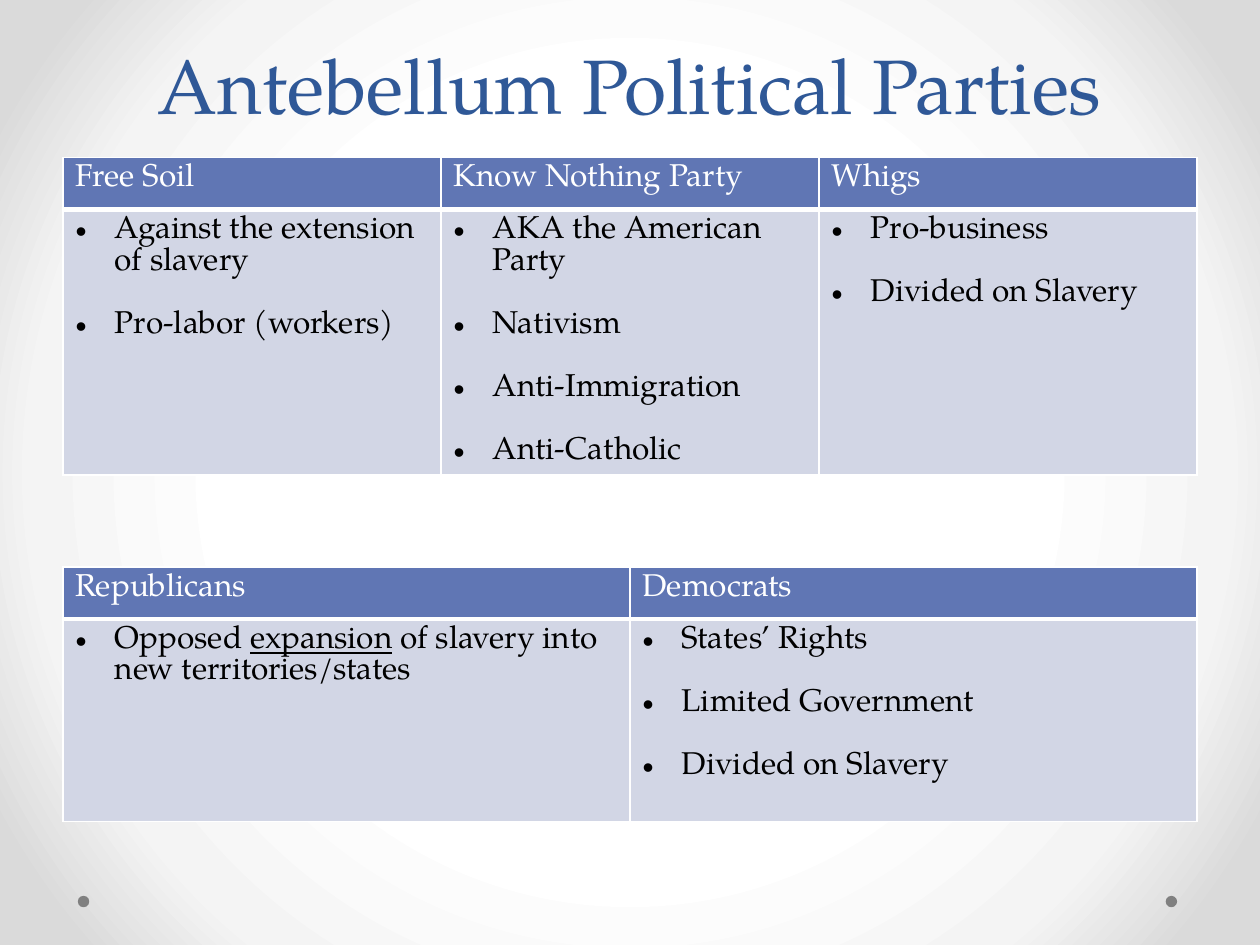
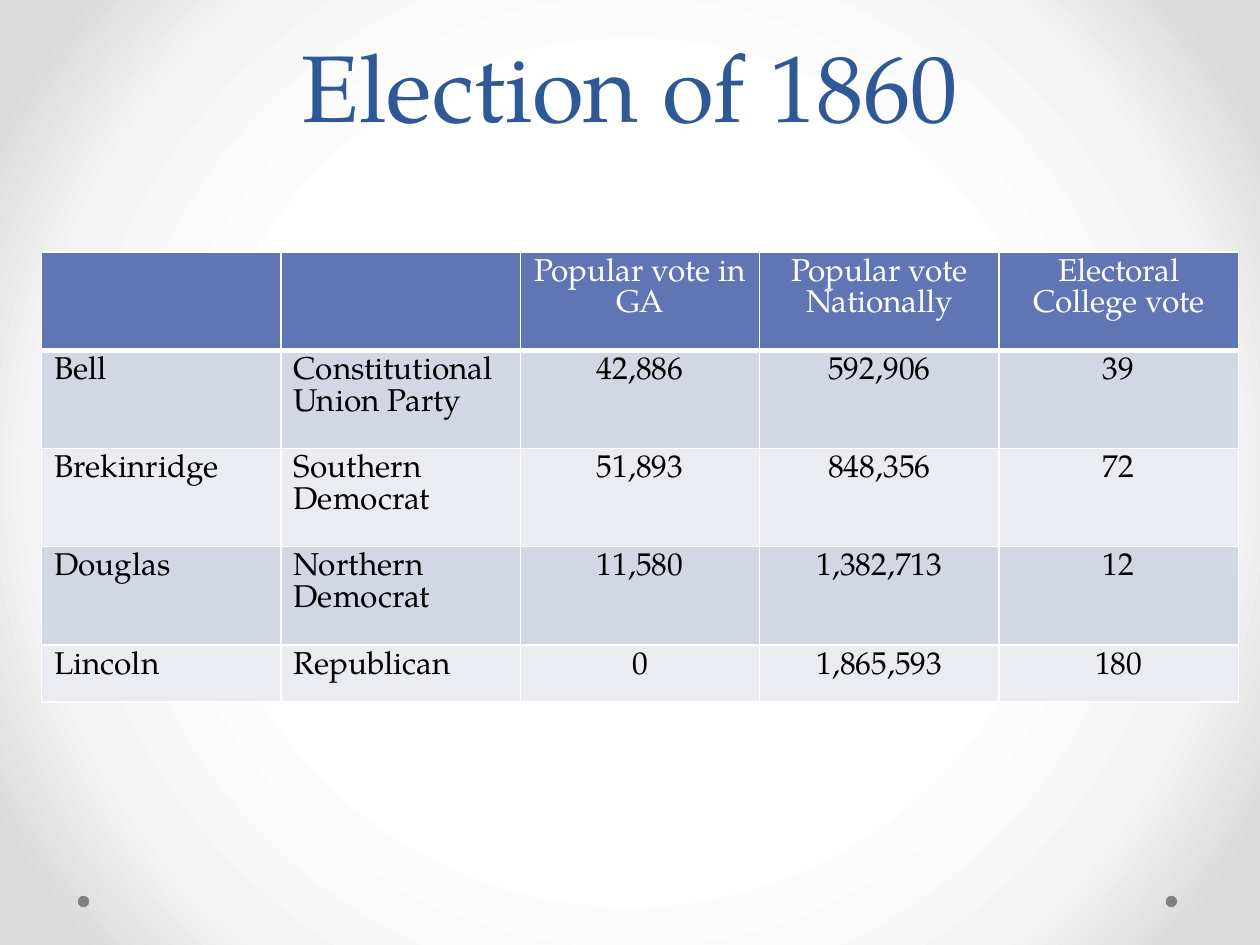
import pptx
import pptx.dml.color
import pptx.enum.shapes
import pptx.enum.text
import pptx.oxml
import pptx.oxml.ns
import pptx.util

Cm = pptx.util.Cm
Pt = pptx.util.Pt
ALIGN = pptx.enum.text.PP_ALIGN
NS = pptx.oxml.ns.nsdecls("a")
FONT = "TeX Gyre Pagella"
WHITE = "FFFFFF"
BLUE = "6076B4"
BANDS = ["D2D6E5", "EAECF2"]


def paint(part, tone):
    if hasattr(part, "solid"):
        part.solid()
        part.fore_color.rgb = pptx.dml.color.RGBColor.from_string(tone)
    else:
        part.color.rgb = pptx.dml.color.RGBColor.from_string(tone)


def grid(slide, left, top, width, sizes, rows, lists=False):
    count = len(rows[0])
    frame = slide.shapes.add_table(len(rows), count, Cm(left), Cm(top), Cm(width), Cm(sum(sizes)))
    table = frame.table
    for col in table.columns:
        col.width = Cm(width / count)
    for i, row in enumerate(rows):
        table.rows[i].height = Cm(sizes[i])
        for j, entry in enumerate(row):
            cell = table.cell(i, j)
            props = cell._tc.get_or_add_tcPr()
            for side in "LRTB":
                wide = 3 if i == 0 and side == "B" else 1
                props.append(pptx.oxml.parse_xml(
                    f'<a:ln{side} {NS} w="{Pt(wide)}"><a:solidFill>'
                    f'<a:srgbClr val="{WHITE}"/></a:solidFill></a:ln{side}>'))
            paint(cell.fill, BANDS[(i - 1) % 2] if i else BLUE)
            items = entry if isinstance(entry, list) else [entry]
            for n, item in enumerate(items):
                frame = cell.text_frame
                para = frame.add_paragraph() if n else frame.paragraphs[0]
                if n:
                    para.space_before = Pt(18)
                if not lists and j > 1:
                    para.alignment = ALIGN.CENTER
                if lists and i:
                    form = para._p.get_or_add_pPr()
                    form.set("marL", str(Cm(0.79)))
                    form.set("indent", str(-Cm(0.79)))
                    form.append(pptx.oxml.parse_xml(f'<a:buFont {NS} typeface="Arial"/>'))
                    form.append(pptx.oxml.parse_xml(f'<a:buChar {NS} char="•"/>'))
                for k, piece in enumerate(item.split("_")):
                    if piece:
                        run = para.add_run()
                        run.text = piece
                        run.font.name = FONT
                        run.font.size = Pt(18)
                        run.font.bold = False
                        if k % 2:
                            run.font.underline = True
                        paint(run.font, "000000" if i else WHITE)


deck = pptx.Presentation()
deck.slide_width = Cm(25.4)
deck.slide_height = Cm(19.05)
master = deck.slide_master

fill = master.background.fill
paint(fill, WHITE)
stops = "".join(
    f'<a:gs pos="{place * 1000}"><a:srgbClr val="{tone}"/></a:gs>'
    for place, tone in [(50, WHITE), (76, "F4F4F4"), (92, "DADADA")])
glow = pptx.oxml.parse_xml(
    f'<a:gradFill {NS} rotWithShape="1"><a:gsLst>{stops}</a:gsLst><a:path path="circle">'
    '<a:fillToRect l="50000" t="50000" r="50000" b="50000"/></a:path></a:gradFill>')
solid = master.element.find(".//" + pptx.oxml.ns.qn("p:bgPr"))[0]
solid.getparent().replace(solid, glow)

slides = []
for text, size, high in [("Antebellum Political Parties", 44, 2.74), ("Election of 1860", 54, 2.97)]:
    slide = deck.slides.add_slide(deck.slide_layouts[5])
    title = slide.shapes.title
    title.left, title.top, title.width, title.height = Cm(1.27), Cm(0), Cm(22.86), Cm(high)
    frame = title.text_frame
    frame.auto_size = pptx.enum.text.MSO_AUTO_SIZE.NONE
    frame.vertical_anchor = pptx.enum.text.MSO_ANCHOR.BOTTOM
    para = frame.paragraphs[0]
    para.alignment = ALIGN.CENTER
    para.line_spacing = Pt(58)
    run = para.add_run()
    run.text = text
    run.font.name = FONT
    run.font.size = Pt(size)
    paint(run.font, "2F5897")
    slides.append(slide)
parties, votes = slides

for left in (23.5, 1.57):
    dot = parties.shapes.add_shape(
        pptx.enum.shapes.MSO_SHAPE.OVAL, Cm(left), Cm(18.06), Cm(0.23), Cm(0.23))
    dot.shadow.inherit = False
    paint(dot.fill, "808080")
    dot.line.fill.background()
    master.shapes.element.append(dot.element)

grid(parties, 1.27, 3.18, 22.86, [1.04, 5.36], [
    ["Free Soil", "Know Nothing Party", "Whigs"],
    [["Against the extension of slavery", "Pro-labor (workers)"],
     ["AKA the American Party", "Nativism", "Anti-Immigration", "Anti-Catholic"],
     ["Pro-business", "Divided on Slavery"]],
], lists=True)

grid(parties, 1.27, 11.43, 22.86, [1.05, 4.08], [
    ["Republicans", "Democrats"],
    [["Opposed _expansion_ of slavery into new territories/states"],
     ["States’ Rights", "Limited Government", "Divided on Slavery"]],
], lists=True)

grid(votes, 0.84, 5.08, 24.13, [1.98] * 4 + [1.15], [
    ["", "", "Popular vote in GA", "Popular vote Nationally", "Electoral College vote"],
    ["Bell", "Constitutional Union Party", "42,886", "592,906", "39"],
    ["Brekinridge", "Southern Democrat", "51,893", "848,356", "72"],
    ["Douglas", "Northern Democrat", "11,580", "1,382,713", "12"],
    ["Lincoln", "Republican", "0", "1,865,593", "180"],
])

deck.save("out.pptx")
